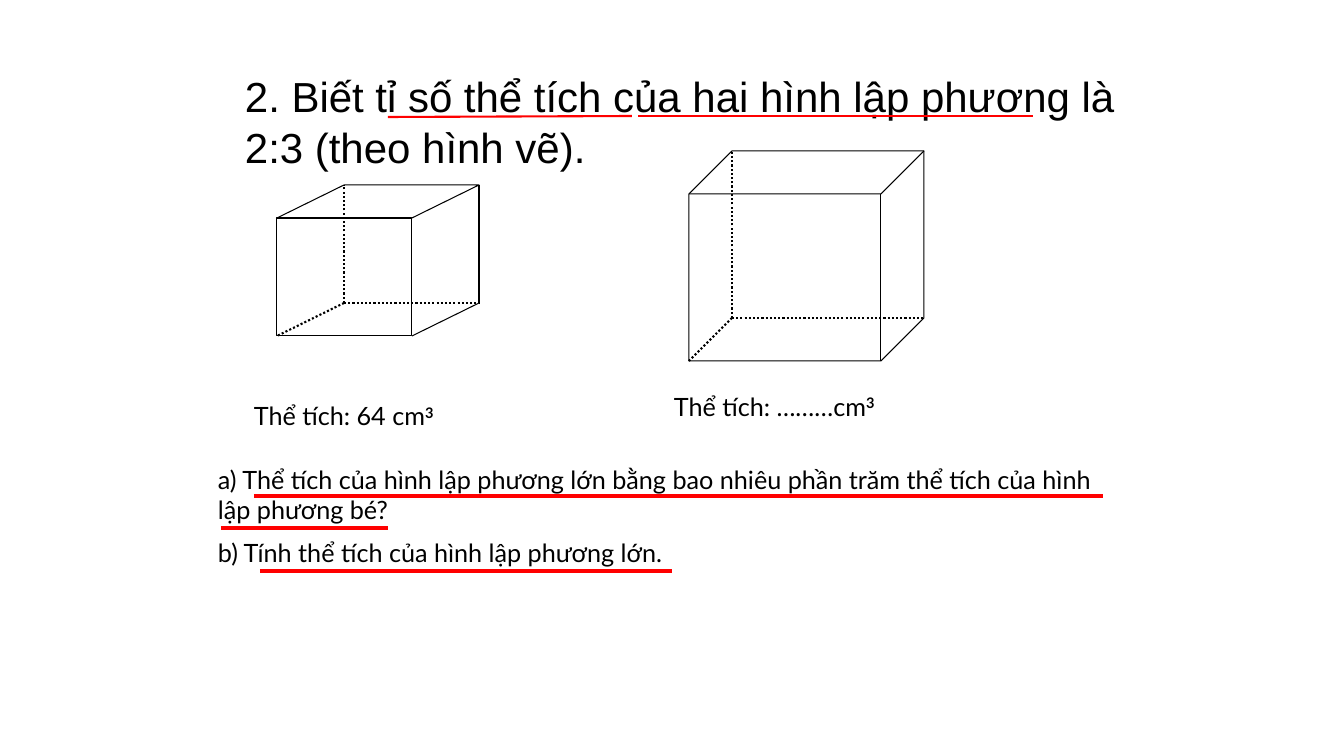
import pptx
import pptx.util
import pptx.dml.color
import pptx.enum.dml
import pptx.enum.shapes
import pptx.enum.text
import pptx.oxml
import pptx.oxml.ns
from lxml import etree

SHAPE = pptx.enum.shapes.MSO_SHAPE
SLIDE = (1344, 756)
EMU_PER_PX = 914400 / 100.8
BLACK, RED = "000000", "FF0000"

# Content: box in px, font, size in pt, paragraphs of (text, raised text, raise in %)
TEXTS = [
    ((235, 66, 907, 111), "Arial", 30,
     [("2. Biết tỉ số thể tích của hai hình lập phương là 2:3 (theo hình vẽ).", "", 0)]),
    ((244, 395, 235, 40), "Lato", 18, [("Thể tích: 64 cm", "3", 26)]),
    ((664, 386, 310, 40), "Lato", 18, [("Thể tích: ………cm", "3", 30)]),
    ((208, 459, 932, 116), "Lato", 18,
     [("a) Thể tích của hình lập phương lớn bằng bao nhiêu phần trăm "
       "thể tích của hình lập phương bé?", "", 0),
      ("b) Tính thể tích của hình lập phương lớn.", "", 0)]),
]

# Each cube: left, top, width, height, then the shift of its back face
SMALL_CUBE = (277, 185, 202, 151, 67, 33)
LARGE_CUBE = (689, 151, 235, 210, 43, 43)

# Underlines: start, end, width in pt
UNDERLINES = [
    ((388, 117), (632, 116), 1.5),
    ((638, 116), (1033, 116), 1.5),
    ((254, 496), (1103, 496), 3),
    ((221, 528), (388, 528), 3),
    ((260, 571), (672, 571), 3),
]


def px(value):
    return round(value * EMU_PER_PX)


def rgb(color):
    return pptx.dml.color.RGBColor.from_string(color)


def style_line(line, color, width, dash=None):
    line.color.rgb = rgb(color)
    line.width = pptx.util.Pt(width)
    if dash:
        line.dash_style = dash


def add_line(shapes, start, end, color=BLACK, width=0.75, dash=None):
    edge = shapes.add_connector(pptx.enum.shapes.MSO_CONNECTOR.STRAIGHT,
                                *map(px, start + end))
    style_line(edge.line, color, width, dash)
    etree.SubElement(edge._element.spPr, pptx.oxml.ns.qn("a:effectLst"))


def add_outline(shapes, preset, box, adjustment=None):
    outline = shapes.add_shape(preset, *map(px, box))
    outline.shadow.inherit = False
    outline.fill.background()
    style_line(outline.line, BLACK, 0.75)
    if adjustment is not None:
        outline.adjustments[0] = adjustment


def add_hidden_edges(shapes, cube):
    left, top, width, height, dx, dy = cube
    corner = (left + dx, top + height - dy)
    for end in [(left + dx, top), (left + width, corner[1]), (left, top + height)]:
        add_line(shapes, corner, end, width=1.5,
                 dash=pptx.enum.dml.MSO_LINE.ROUND_DOT)


def add_run(paragraph, text, font, size):
    run = paragraph.add_run()
    run.text = text
    for name, value in {"name": font, "size": pptx.util.Pt(size)}.items():
        setattr(run.font, name, value)
    run.font.color.rgb = rgb(BLACK)
    return run


def add_text(shapes, box, font, size, paragraphs):
    frame = shapes.add_textbox(*map(px, box)).text_frame
    frame.word_wrap = True
    frame.auto_size = pptx.enum.text.MSO_AUTO_SIZE.SHAPE_TO_FIT_TEXT
    for index, (text, raised, percent) in enumerate(paragraphs):
        paragraph = frame.add_paragraph() if index else frame.paragraphs[0]
        # Space before: half a line
        before = etree.SubElement(paragraph._p.get_or_add_pPr(),
                                  pptx.oxml.ns.qn("a:spcBef"))
        etree.SubElement(before, pptx.oxml.ns.qn("a:spcPct"), val="50000")
        add_run(paragraph, text, font, size)
        if raised:
            exponent = add_run(paragraph, raised, font, size)
            exponent.font.bold = True
            exponent.font._element.set("baseline", str(percent * 1000))


def main():
    deck = pptx.Presentation()
    deck.slide_width, deck.slide_height = map(px, SLIDE)
    shapes = deck.slides.add_slide(deck.slide_layouts[6]).shapes

    # Problem, volumes and questions
    for text in TEXTS:
        add_text(shapes, *text)

    # Small cube: top face, front face, right face
    left, top, width, height, dx, dy = SMALL_CUBE
    right, bottom = left + width, top + height
    small = shapes.add_group_shape().shapes
    add_outline(small, SHAPE.PARALLELOGRAM, (left, top, width, dy), dx / dy)
    add_outline(small, SHAPE.RECTANGLE, (left, top + dy, width - dx, height - dy))
    add_line(small, (right, top), (right, bottom - dy))
    add_line(small, (right - dx, bottom), (right, bottom - dy))
    add_hidden_edges(small, SMALL_CUBE)

    # Large cube
    left, top, width, height, dx, dy = LARGE_CUBE
    large = shapes.add_group_shape().shapes
    add_outline(large, SHAPE.CUBE, (left, top, width, height), dx / height)
    add_hidden_edges(large, LARGE_CUBE)

    # Red underlines
    for start, end, weight in UNDERLINES:
        add_line(shapes, start, end, RED, weight)

    deck.save("out.pptx")


if __name__ == "__main__":
    main()
